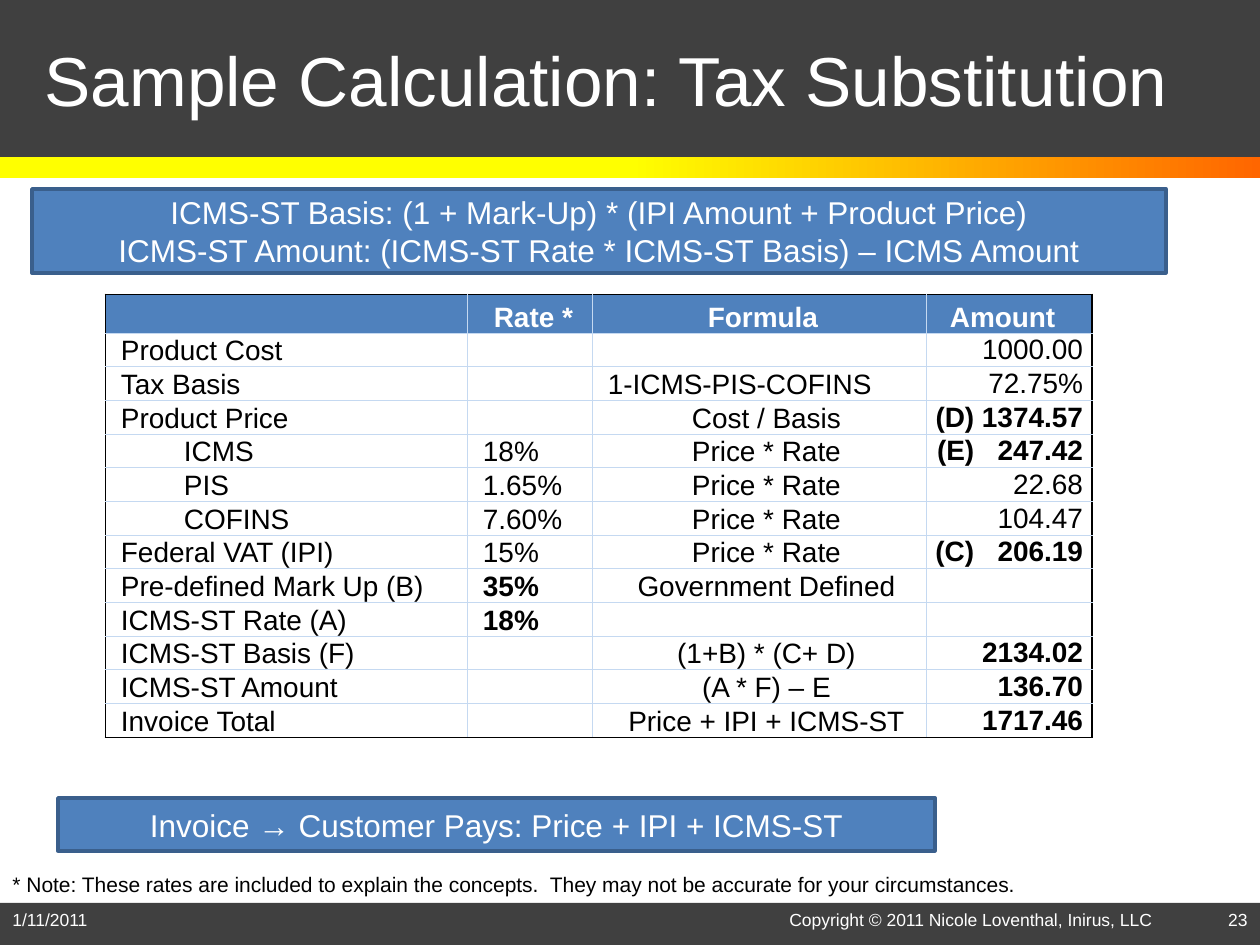
from lxml.etree import SubElement
from pptx import Presentation
from pptx.dml.color import RGBColor
from pptx.enum.shapes import MSO_SHAPE
from pptx.enum.text import MSO_ANCHOR, MSO_AUTO_SIZE, PP_ALIGN
from pptx.oxml.ns import qn
from pptx.util import Emu, Pt

SCALE = 914400 / 126  # EMU per px
LEFT, MID, RIGHT = PP_ALIGN.LEFT, PP_ALIGN.CENTER, PP_ALIGN.RIGHT
DARK, BLUE, WHITE, BLACK, PALE = "404040", "4F81BD", "FFFFFF", "000000", "C5D9F1"


def px(*nums):
    return [Emu(round(n * SCALE)) for n in nums]


def color(code):
    return RGBColor.from_string(code)


deck = Presentation()
deck.slide_width, deck.slide_height = px(1260, 945)
slide = deck.slides.add_slide(deck.slide_layouts[5])
shapes = slide.shapes
title = shapes.title

# Bands and formula boxes: place, fill, line
bars = []
for place, fill, line in [
    ((0, 0, 1260, 157), DARK, None),
    ((0, 903, 1260, 42), DARK, None),
    ((0, 157, 1260, 21), None, None),
    ((32, 189, 1134, 84), BLUE, "3A5F8C"),
    ((58, 798, 877, 53), BLUE, "3A5F8C"),
]:
    bar = shapes.add_shape(MSO_SHAPE.RECTANGLE, *px(*place))
    bar.shadow.inherit = False
    if fill:
        bar.fill.solid()
        bar.fill.fore_color.rgb = color(fill)
    else:
        bar.fill.gradient()
        bar.fill.gradient_angle = 180
        for stop, tint, spot in zip(bar.fill.gradient_stops, ("FF6600", "FFFF00"), (0, 0.5)):
            stop.color.rgb = color(tint)
            stop.position = spot
    if line:
        bar.line.color.rgb = color(line)
        bar.line.width = Pt(2)
    else:
        bar.line.fill.background()
    bars.append(bar)

# Title goes above the dark band
bars[-1]._element.addnext(title._element)
title.left, title.top, title.width, title.height = px(32, 0, 1197, 157)

# Footer and note boxes
date, page, owner, note = [
    shapes.add_textbox(*px(*place))
    for place in [(0, 903, 294, 42), (966, 903, 294, 42), (777, 903, 420, 42), (0, 865, 1038, 38)]
]

# Text of every box: shape, lines, size, align, anchor, color
for box, lines, size, align, anchor, tint in [
    (title, ["Sample Calculation: Tax Substitution"], 39.6, LEFT, MSO_ANCHOR.MIDDLE, WHITE),
    (bars[3], ["ICMS-ST Basis: (1 + Mark-Up) * (IPI Amount + Product Price)",
               "ICMS-ST Amount: (ICMS-ST Rate * ICMS-ST Basis) – ICMS Amount"],
     18, MID, MSO_ANCHOR.MIDDLE, WHITE),
    (bars[4], ["Invoice → Customer Pays: Price + IPI + ICMS-ST"], 18, MID, MSO_ANCHOR.MIDDLE, WHITE),
    (date, ["1/11/2011"], 10, LEFT, MSO_ANCHOR.TOP, WHITE),
    (page, ["23"], 10, RIGHT, MSO_ANCHOR.TOP, WHITE),
    (owner, ["Copyright © 2011 Nicole Loventhal, Inirus, LLC"], 10, LEFT, MSO_ANCHOR.TOP, WHITE),
    (note, ["* Note: These rates are included to explain the concepts.  "
            "They may not be accurate for your circumstances."], 12, LEFT, MSO_ANCHOR.TOP, BLACK),
]:
    frame = box.text_frame
    frame.text = "\n".join(lines)
    frame.auto_size = MSO_AUTO_SIZE.NONE
    frame.word_wrap = box is not note
    frame.vertical_anchor = anchor
    for para in frame.paragraphs:
        para.alignment = align
        for run in para.runs:
            for key, value in {"name": "Arial", "size": Pt(size)}.items():
                setattr(run.font, key, value)
            run.font.color.rgb = color(tint)

# Tax table: a cell given as a pair has a wide gap between its parts
rows = [
    ("", "Rate *", "Formula", "Amount"),
    ("Product Cost", "", "", "1000.00"),
    ("Tax Basis", "", "1-ICMS-PIS-COFINS", "72.75%"),
    ("Product Price", "", "Cost / Basis", "(D) 1374.57"),
    ("ICMS", "18%", "Price * Rate", ("(E)", "247.42")),
    ("PIS", "1.65%", "Price * Rate", "22.68"),
    ("COFINS", "7.60%", "Price * Rate", "104.47"),
    ("Federal VAT (IPI)", "15%", "Price * Rate", ("(C)", "206.19")),
    ("Pre-defined Mark Up (B)", "35%", "Government Defined", ""),
    ("ICMS-ST Rate (A)", "18%", "", ""),
    ("ICMS-ST Basis (F)", "", "(1+B) * (C+ D)", "2134.02"),
    ("ICMS-ST Amount", "", "(A * F) – E", "136.70"),
    ("Invoice Total", "", "Price + IPI + ICMS-ST", "1717.46"),
]
bold = {(8, 1), (9, 1)} | {(r, 3) for r in (3, 4, 7, 10, 11, 12)}
last = len(rows) - 1
table = shapes.add_table(len(rows), 4, *px(105, 294, 987, 443)).table
table.first_row = table.horz_banding = False
for col, wide in zip(table.columns, px(362, 125, 334, 166)):
    col.width = wide
for r, row in enumerate(rows):
    high = 39 if r == 0 else 33 if r % 3 == 1 else 34
    table.rows[r].height = px(high)[0]
    for c, text in enumerate(row):
        cell = table.cell(r, c)
        head, sum_col = r == 0, c == 3 and r > 0
        sides = px(9, 9 if sum_col else 1, 1, 1 if sum_col else 0)
        for key, value in zip(("left", "right", "top", "bottom"), sides):
            setattr(cell, "margin_" + key, value)
        cell.vertical_anchor = MSO_ANCHOR.BOTTOM

        # Borders: black outside, pale inside
        props = cell._tc.get_or_add_tcPr()
        for side, edge in {"L": c == 0, "R": c == 3, "T": head, "B": r == last}.items():
            wide = Pt(1 if side == "R" and edge else 0.5)
            rule = SubElement(props, qn("a:ln" + side), w=str(wide))
            paint = SubElement(rule, qn("a:solidFill"))
            SubElement(paint, qn("a:srgbClr"), val=BLACK if edge else PALE)
        if head:
            cell.fill.solid()
            cell.fill.fore_color.rgb = color(BLUE)
        else:
            cell.fill.background()

        # Alignment and indents
        para = cell.text_frame.paragraphs[0]
        if not text:
            end = para._p.get_or_add_endParaRPr()
            end.set("sz", "1600")
            SubElement(end, qn("a:latin"), typeface="Arial")
            continue
        if sum_col:
            para.alignment = RIGHT
        elif (c == 2 and r != 2) or (head and c == 1):
            para.alignment = MID
        if head:
            indent = 15 if c == 3 else 0
        else:
            indent = 0 if sum_col else 7
        if c == 0 and r in (4, 5, 6):
            para.level, indent = 1, 70
        form = para._p.get_or_add_pPr()
        form.set("marL", str(px(indent)[0]))
        form.set("indent", "0")

        # Runs
        parts = [text] if isinstance(text, str) else [text[0], " ", text[1]]
        look = {"name": "Arial", "size": Pt(16), "bold": head or (r, c) in bold}
        for part in parts:
            run = para.add_run()
            run.text = part
            for key, value in look.items():
                setattr(run.font, key, value)
            run.font.color.rgb = color(WHITE if head else BLACK)
            if part == " ":
                run._r.get_or_add_rPr().set("spc", "890")

deck.save("out.pptx")
